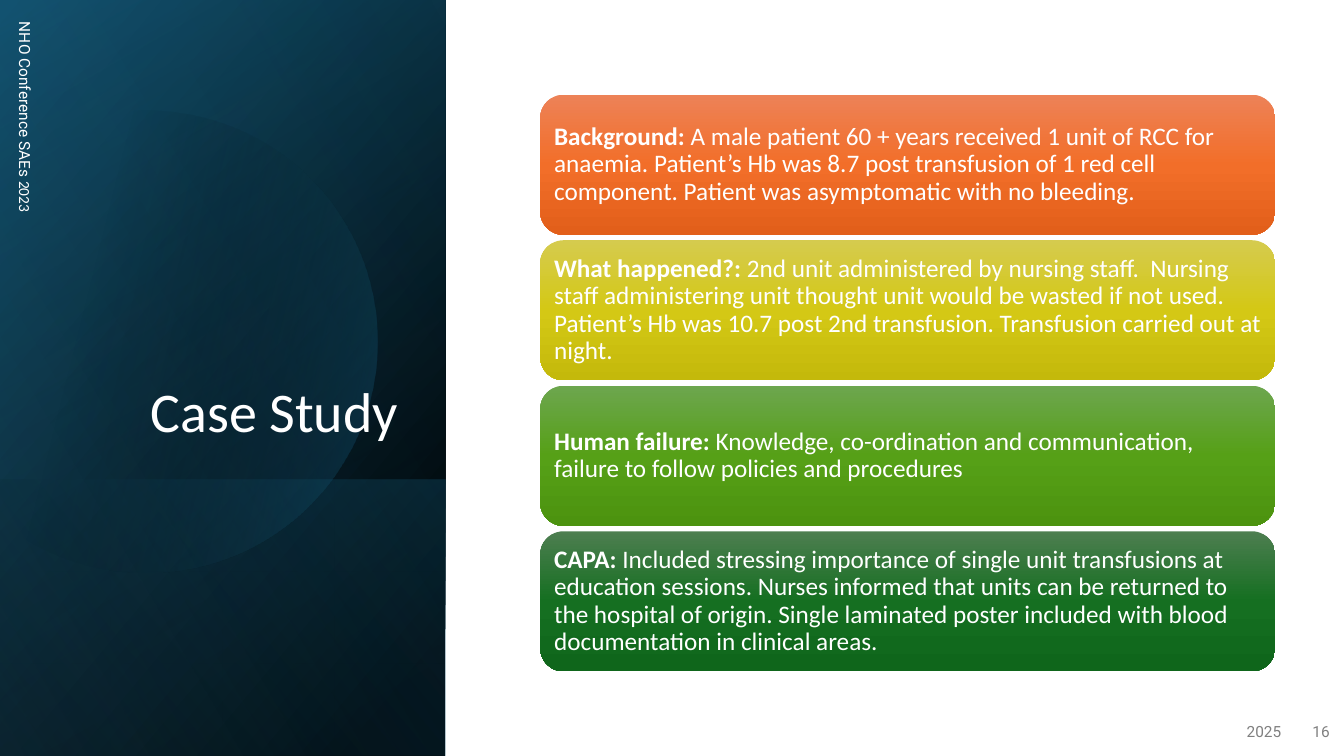
import math
from dataclasses import dataclass

from lxml import etree
from pptx import Presentation
from pptx import util as u
from pptx.dml.color import RGBColor
from pptx.enum import shapes, text
from pptx.oxml import parse_xml
from pptx.oxml.ns import nsdecls, qn

WIDTH, HEIGHT = u.Inches(13.33), u.Inches(7.5)
WHITE, GREY = "FFFFFF", "808080"


@dataclass(frozen=True)
class Box:
    x: float
    y: float
    w: float
    h: float

    def emu(self) -> tuple[int, int, int, int]:
        return across(self.x), down(self.y), across(self.w), down(self.h)

    def turned(self) -> tuple[int, int, int, int]:
        x, y, w, h = self.emu()
        return x + (w - h) // 2, y + (h - w) // 2, h, w


@dataclass(frozen=True)
class Stop:
    position: int
    color: str
    opacity: int = 100


@dataclass(frozen=True)
class Gradient:
    angle: int
    stops: tuple[Stop, ...]


@dataclass(frozen=True)
class Panel:
    box: Box
    gradient: Gradient


@dataclass(frozen=True)
class Card:
    heading: str
    body: str
    colors: tuple[str, str, str]


@dataclass(frozen=True)
class Label:
    box: Box
    runs: tuple[tuple[str, str], ...]
    color: str
    align: text.PP_ALIGN
    vertical: bool = False


SIDE = Box(0, 0, 33.15, 100)
FOOT = Box(0, 63.47, 33.15, 36.53)
TITLE = Box(4.8, 24.53, 25.58, 34.93)
FIRST_CARD = Box(40.2, 12.53, 54.68, 18.53)
CARD_PITCH = 19.25
DISC_X, DISC_Y, DISC_RADIUS, DISC_CUT = 10.88, 45.2, 17.18, -1.12

PANELS_BELOW = (
    Panel(SIDE, Gradient(50, (Stop(8, "000000"), Stop(100, "104862")))),
    Panel(SIDE, Gradient(30, (Stop(0, "000000", 0), Stop(99, "156082", 46)))),
    Panel(FOOT, Gradient(130, (Stop(2, "156082", 29), Stop(100, "000000", 30)))),
)
DISC_GRADIENT = Gradient(14, (Stop(29, "000000", 0), Stop(100, "156082", 43)))
PANEL_ABOVE = Panel(SIDE, Gradient(120, (Stop(0, "000000", 0), Stop(99, "46B1E1", 11))))

LABELS = (
    Label(Box(0.38, 1.6, 3, 60), (("NHO Conference SAEs ", "Roboto"), ("2023", "Calibri")),
          WHITE, text.PP_ALIGN.LEFT, True),
    Label(Box(73.58, 94.13, 22.5, 5.33), (("2025", "Roboto"),), GREY, text.PP_ALIGN.RIGHT),
    Label(Box(96, 94.13, 3.68, 5.33), (("16", "Roboto"),), GREY, text.PP_ALIGN.RIGHT),
)

CARDS = (
    Card("Background: ",
         "A male patient 60 + years received 1 unit of RCC for anaemia. Patient’s Hb was 8.7 "
         "post transfusion of 1 red cell component. Patient was asymptomatic with no bleeding.",
         ("ED8257", "F26E29", "E25F1A")),
    Card("What happened?: ",
         "2nd unit administered by nursing staff.  Nursing staff administering unit thought "
         "unit would be wasted if not used. Patient’s Hb was 10.7 post 2nd transfusion. "
         "Transfusion carried out at night.",
         ("D5CB4E", "D4C815", "C4B90B")),
    Card("Human failure: ",
         "Knowledge, co-ordination and communication, failure to follow policies and procedures",
         ("6DA64E", "56A017", "4C930F")),
    Card("CAPA:",
         " Included stressing importance of single unit transfusions at education sessions. "
         "Nurses informed that units can be returned to the hospital of origin. Single laminated "
         "poster included with blood documentation in clinical areas.",
         ("4D7E50", "156F21", "0F661B")),
)


def across(share: float) -> int:
    return round(WIDTH * share / 100)


def down(share: float) -> int:
    return round(HEIGHT * share / 100)


def rgb(color: str) -> RGBColor:
    return RGBColor.from_string(color)


def paint(sp, gradient: Gradient) -> None:
    sp.shadow.inherit = False
    sp.line.fill.background()
    sp.fill.background()
    fill = parse_xml(f'<a:gradFill {nsdecls("a")} rotWithShape="1"><a:gsLst/></a:gradFill>')
    for stop in gradient.stops:
        gs = etree.SubElement(fill[0], qn("a:gs"), pos=str(stop.position * 1000))
        color = etree.SubElement(gs, qn("a:srgbClr"), val=stop.color)
        if stop.opacity < 100:
            etree.SubElement(color, qn("a:alpha"), val=str(stop.opacity * 1000))
    etree.SubElement(fill, qn("a:lin"), ang=str(gradient.angle * 60000), scaled="0")
    properties = sp._element.spPr
    properties.replace(properties.find(qn("a:noFill")), fill)


def add_panel(s, panel: Panel) -> None:
    sp = s.shapes.add_shape(shapes.MSO_SHAPE.RECTANGLE, *panel.box.turned())
    sp.rotation = 90
    sp._element.spPr.find(qn("a:xfrm")).set("flipH", "1")
    paint(sp, panel.gradient)


def add_disc(s) -> None:
    radius = across(DISC_RADIUS)
    limit = math.acos((DISC_CUT - DISC_X) / DISC_RADIUS)
    steps = 120
    angles = [limit * (2 * i / steps - 1) for i in range(steps + 1)]
    points = [(across(DISC_X) + round(radius * math.cos(a)),
               down(DISC_Y) + round(radius * math.sin(a))) for a in angles]
    builder = s.shapes.build_freeform(*points[0])
    builder.add_line_segments(points[1:], close=True)
    paint(builder.convert_to_shape(), DISC_GRADIENT)


def add_title(s) -> None:
    sp = s.shapes.title
    sp.left, sp.top, sp.width, sp.height = TITLE.emu()
    s.shapes._spTree.append(sp._element)
    tf = sp.text_frame
    tf.text = "Case Study"
    tf.word_wrap = True
    tf.auto_size = text.MSO_AUTO_SIZE.NONE
    tf.vertical_anchor = text.MSO_ANCHOR.BOTTOM
    p = tf.paragraphs[0]
    p.alignment, p.line_spacing = text.PP_ALIGN.RIGHT, 0.9
    p.font.name, p.font.size, p.font.color.rgb = "Calibri", u.Pt(40), rgb(WHITE)


def add_label(s, label: Label) -> None:
    sp = s.shapes.add_textbox(*(label.box.turned() if label.vertical else label.box.emu()))
    sp.rotation = 90 if label.vertical else 0
    tf = sp.text_frame
    tf.word_wrap = True
    tf.vertical_anchor = text.MSO_ANCHOR.MIDDLE
    p = tf.paragraphs[0]
    p.alignment, p.space_after = label.align, u.Pt(6)
    p.font.size, p.font.color.rgb = u.Pt(11), rgb(label.color)
    for words, font in label.runs:
        r = p.add_run()
        r.text, r.font.name = words, font


def add_card(s, card: Card, row: int) -> None:
    first = FIRST_CARD
    box = Box(first.x, first.y + row * CARD_PITCH, first.w, first.h)
    sp = s.shapes.add_shape(shapes.MSO_SHAPE.ROUNDED_RECTANGLE, *box.emu())
    paint(sp, Gradient(90, tuple(Stop(50 * i, c) for i, c in enumerate(card.colors))))
    tf = sp.text_frame
    tf.word_wrap = True
    tf.vertical_anchor = text.MSO_ANCHOR.MIDDLE
    tf.margin_left = tf.margin_right = tf.margin_top = tf.margin_bottom = u.Inches(0.07)
    p = tf.paragraphs[0]
    p.alignment, p.line_spacing = text.PP_ALIGN.LEFT, 0.9
    p.font.name, p.font.size, p.font.color.rgb = "Calibri", u.Pt(18), rgb(WHITE)
    for words, bold in ((card.heading, True), (card.body, False)):
        r = p.add_run()
        r.text, r.font.bold = words, bold


def main() -> None:
    prs = Presentation()
    prs.slide_width, prs.slide_height = WIDTH, HEIGHT
    s = prs.slides.add_slide(prs.slide_layouts[5])
    for panel in PANELS_BELOW:
        add_panel(s, panel)
    add_disc(s)
    add_panel(s, PANEL_ABOVE)
    add_title(s)
    for label in LABELS:
        add_label(s, label)
    for row, card in enumerate(CARDS):
        add_card(s, card, row)
    prs.save("out.pptx")


if __name__ == "__main__":
    main()
